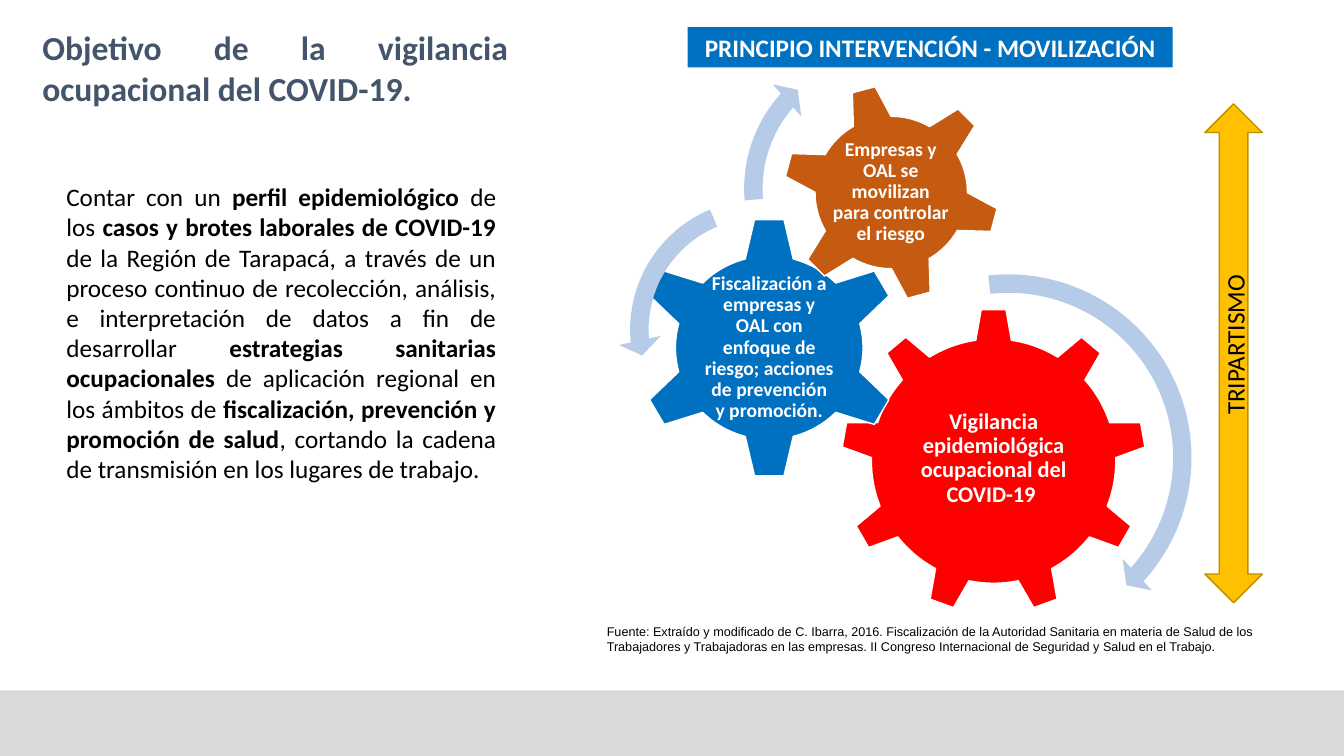
from pptx import Presentation
from pptx.dml.color import RGBColor
from pptx.enum.shapes import MSO_SHAPE
from pptx.enum.text import MSO_ANCHOR, MSO_AUTO_SIZE, PP_ALIGN
from pptx.util import Emu, Pt

PX = 9144
TITLE_ONLY = 5
RECTANGLE = MSO_SHAPE.RECTANGLE
UP_DOWN_ARROW = MSO_SHAPE.UP_DOWN_ARROW
GEAR_6, GEAR_9 = MSO_SHAPE.GEAR_6, MSO_SHAPE.GEAR_9
CIRCULAR_ARROW = MSO_SHAPE.CIRCULAR_ARROW
LEFT_CIRCULAR_ARROW = MSO_SHAPE.LEFT_CIRCULAR_ARROW
LEFT, CENTER, JUSTIFY = PP_ALIGN.LEFT, PP_ALIGN.CENTER, PP_ALIGN.JUSTIFY
TOP, MIDDLE = MSO_ANCHOR.TOP, MSO_ANCHOR.MIDDLE
NO_FIT = MSO_AUTO_SIZE.NONE

BLUE, RED, ORANGE, GOLD = "0070C0", "FF0000", "C55A11", "FFC000"
PALE_BLUE, GRAY, SLATE = "B5CBE7", "D9D9D9", "44546A"
WHITE, BLACK, DARK_GOLD = "FFFFFF", "000000", "BD8E00"

GEARS = [
    (GEAR_9, (834, 306, 303, 303), 0, RED, (895, 377, 181, 156), 16,
     "Vigilancia epidemiológica ocupacional del COVID-19 "),
    (GEAR_6, (631, 215, 264, 260), 0, BLUE, (697, 281, 132, 128), 14,
     "Fiscalización a empresas y OAL con enfoque de riesgo; "
     "acciones de prevención y promoción."),
    (GEAR_6, (776, 83, 216, 216), 345, ORANGE, (823, 130, 121, 121), 14,
     "Empresas y OAL se movilizan para controlar el riesgo"),
]

TURN_ARROWS = [
    (CIRCULAR_ARROW, (806, 260, 388, 388), (0.047, 2.99, 25.331, 158.252, 0.055)),
    (LEFT_CIRCULAR_ARROW, (613, 186, 282, 282), (0.065, 4.3, 104.891, 148.378, 0.075)),
    (CIRCULAR_ARROW, (726, 35, 304, 304), (0.06, 3.941, 133.138, 105.082, 0.07)),
]

OBJECTIVE = [
    ("Contar con un ", False),
    ("perfil epidemiológico ", True),
    ("de los ", False),
    ("casos y brotes laborales de COVID-19 ", True),
    ("de la Región de Tarapacá, a través de un proceso continuo de recolección, "
     "análisis, e interpretación de datos a fin de desarrollar ", False),
    ("estrategias sanitarias ocupacionales ", True),
    ("de aplicación regional en los ámbitos de ", False),
    ("fiscalización, prevención y promoción de salud", True),
    (", cortando la cadena de transmisión en los lugares de trabajo.", False),
]

SOURCE = (
    "Fuente: Extraído y modificado de C. Ibarra, 2016. Fiscalización de la Autoridad "
    "Sanitaria en materia de Salud de los Trabajadores y Trabajadoras en las empresas. "
    "II Congreso Internacional de Seguridad y Salud en el Trabajo."
)


def color(value):
    return RGBColor.from_string(value)


def lengths(box):
    return [Emu(value * PX) for value in box]


class SlideBuilder:
    font_name = "Calibri"

    def __init__(self, slide):
        self.slide = slide

    def fill_text(self, shape, content, size, ink, bold=False, align=LEFT,
                  anchor=TOP, font_name=None):
        frame = shape.text_frame
        frame.word_wrap = True
        frame.auto_size = NO_FIT
        frame.vertical_anchor = anchor
        paragraph = frame.paragraphs[0]
        paragraph.alignment = align
        if isinstance(content, str):
            paragraph.text = content
            paragraph.font.bold = bold
        else:
            for text, strong in content:
                run = paragraph.add_run()
                run.text = text
                run.font.bold = strong
        paragraph.font.name = font_name or self.font_name
        paragraph.font.size = Pt(size)
        paragraph.font.color.rgb = color(ink)

    def title(self, box, content, size, ink):
        shape = self.slide.shapes.title
        shape.left, shape.top, shape.width, shape.height = lengths(box)
        self.fill_text(shape, content, size, ink, bold=True, align=JUSTIFY)

    def text(self, box, content, size, ink, rotation=0, **style):
        shape = self.slide.shapes.add_textbox(*lengths(box))
        shape.rotation = rotation
        self.fill_text(shape, content, size, ink, **style)
        return shape

    def shape(self, kind, box, fill, line=None, rotation=0, adjustments=()):
        shape = self.slide.shapes.add_shape(kind, *lengths(box))
        shape.shadow.inherit = False
        shape.rotation = rotation
        shape.fill.solid()
        shape.fill.fore_color.rgb = color(fill)
        if line:
            shape.line.color.rgb = color(line)
            shape.line.width = Pt(1)
        else:
            shape.line.fill.background()
        for index, value in enumerate(adjustments):
            shape.adjustments[index] = value
        return shape

    def gear(self, kind, box, rotation, fill, label_box, size, label):
        self.shape(kind, box, fill, WHITE, rotation)
        frame = self.text(label_box, label, size, WHITE, bold=True,
                          align=CENTER, anchor=MIDDLE).text_frame
        frame.margin_left = frame.margin_right = Emu(2 * PX)
        frame.margin_top = frame.margin_bottom = Emu(2 * PX)
        frame.paragraphs[0].line_spacing = 0.9


def main():
    presentation = Presentation()
    presentation.slide_width, presentation.slide_height = lengths((1333, 750))
    slide = presentation.slides.add_slide(presentation.slide_layouts[TITLE_ONLY])
    builder = SlideBuilder(slide)

    builder.shape(RECTANGLE, (0, 685, 1333, 65), GRAY)
    builder.title((32, 22, 482, 91),
                  "Objetivo de la vigilancia ocupacional del COVID-19.", 24, SLATE)
    builder.text((56, 175, 446, 313), OBJECTIVE, 18, BLACK, align=JUSTIFY)

    for gear in GEARS:
        builder.gear(*gear)
    for kind, box, adjustments in TURN_ARROWS:
        builder.shape(kind, box, PALE_BLUE, adjustments=adjustments)

    builder.text((592, 614, 661, 56), SOURCE, 9, BLACK, font_name="Arial")
    banner = builder.shape(RECTANGLE, (682, 27, 481, 40), BLUE)
    builder.fill_text(banner, "PRINCIPIO INTERVENCIÓN - MOVILIZACIÓN", 18, WHITE,
                      bold=True, align=CENTER, anchor=MIDDLE)
    builder.shape(UP_DOWN_ARROW, (1195, 103, 57, 495), GOLD, DARK_GOLD)
    builder.text((1137, 314, 175, 40), "TRIPARTISMO", 18, BLACK, rotation=270)

    presentation.save("out.pptx")


if __name__ == "__main__":
    main()
